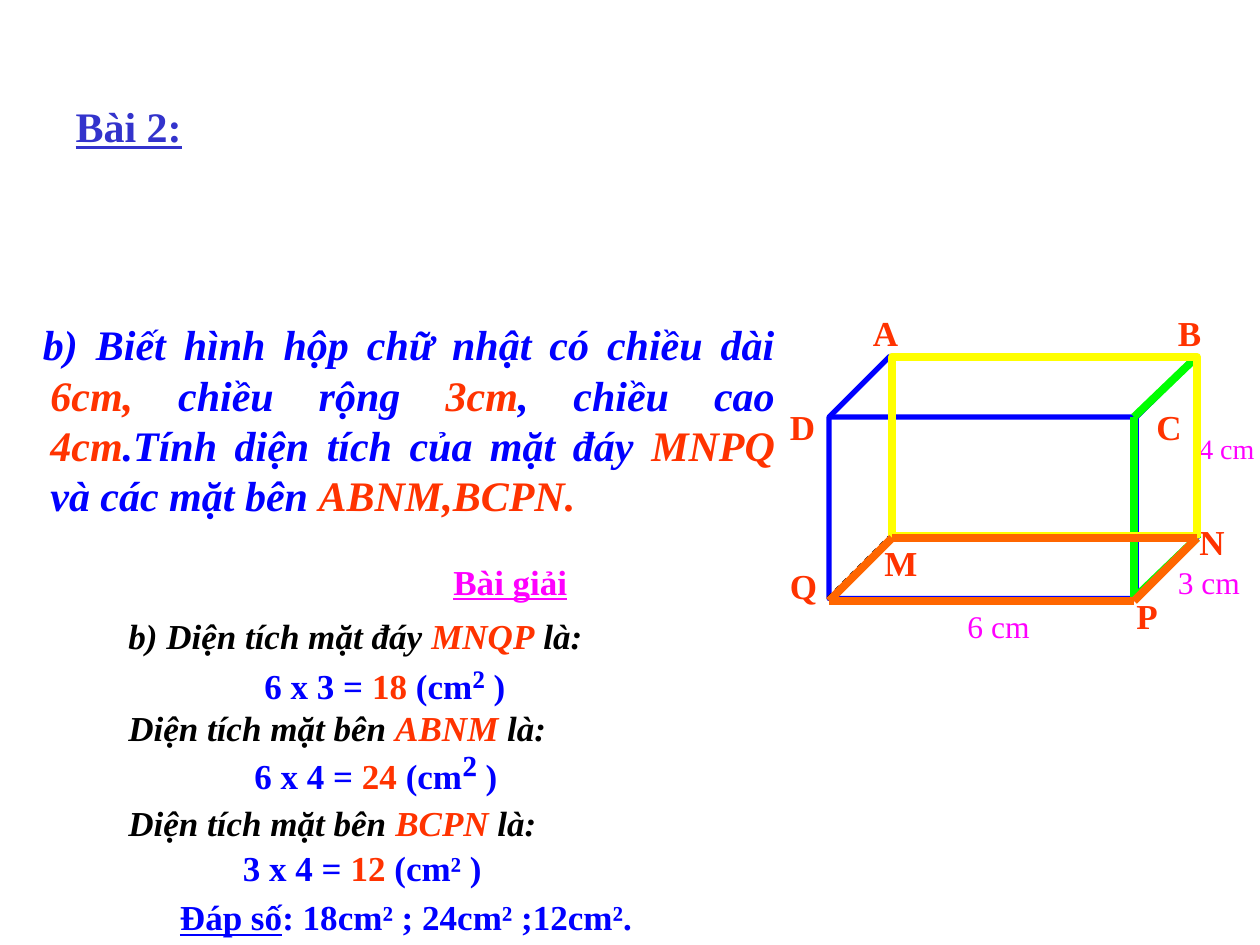
from dataclasses import dataclass

from lxml import etree
from pptx import Presentation
from pptx import util as u
from pptx.dml.color import RGBColor
from pptx.enum import dml, shapes, text
from pptx.oxml import ns


@dataclass(frozen=True)
class Theme:
    font: str = "Times New Roman"
    heading: str = "3333CC"
    blue: str = "0000FF"
    red: str = "FF3300"
    pink: str = "FF00FF"
    black: str = "000000"
    green: str = "00FF00"
    yellow: str = "FFFF00"
    orange: str = "FF6600"
    large: int = 24
    normal: int = 20
    edge: float = 3
    highlight: float = 4.5


THEME = Theme()
EMU_PER_PX = 9144  # 100 px to the inch


def px(value):
    return u.Emu(value * EMU_PER_PX)


def rgb(code):
    return RGBColor.from_string(code)


def write(paragraph, runs, size, bold=True, italic=False):
    """Runs are (text, colour) with an optional dict of run settings."""
    font = paragraph.font
    font.name, font.size, font.bold, font.italic = THEME.font, u.Pt(size), bold, italic
    for content, colour, *settings in runs:
        run = paragraph.add_run()
        run.text = content
        run.font.color.rgb = rgb(colour)
        for name, value in (settings[0] if settings else {}).items():
            setattr(run.font, name, value)


def add_text(parent, left, top, width, height, runs, size=THEME.normal, **style):
    box = parent.add_textbox(px(left), px(top), px(width), px(height))
    box.text_frame.word_wrap = True
    write(box.text_frame.paragraphs[0], runs, size, **style)


def add_line(parent, start, end, colour, width, dash=None):
    line = parent.add_connector(shapes.MSO_CONNECTOR.STRAIGHT, *map(px, start + end))
    line.line.color.rgb = rgb(colour)
    line.line.width = u.Pt(width)
    if dash:
        line.line.dash_style = dash
    etree.SubElement(line._element.spPr, ns.qn("a:effectLst"))


def add_outline(parent, kind, left, top, width, height, colour, weight):
    shape = parent.add_shape(kind, px(left), px(top), px(width), px(height))
    shape.shadow.inherit = False
    shape.fill.background()
    shape.line.color.rgb = rgb(colour)
    shape.line.width = u.Pt(weight)
    return shape


def place(placeholder, left, top, width, height):
    placeholder.left, placeholder.top = px(left), px(top)
    placeholder.width, placeholder.height = px(width), px(height)
    frame = placeholder.text_frame
    frame.auto_size = text.MSO_AUTO_SIZE.NONE
    frame.vertical_anchor = text.MSO_ANCHOR.TOP
    return frame


def build_title(slide, left, top, width, height):
    paragraph = place(slide.shapes.title, left, top, width, height).paragraphs[0]
    paragraph.alignment = text.PP_ALIGN.LEFT
    write(paragraph, [("Bài 2:", THEME.heading, {"underline": True})], THEME.large)


def build_problem(slide, left, top, width, height):
    frame = place(slide.placeholders[1], left, top, width, height)
    frame.margin_top = px(11)
    paragraph = frame.paragraphs[0]
    paragraph.alignment = text.PP_ALIGN.JUSTIFY
    properties = paragraph._p.get_or_add_pPr()
    properties.set("marL", str(px(38)))
    properties.set("indent", str(px(-6)))
    etree.SubElement(properties, ns.qn("a:buNone"))
    blue, red = THEME.blue, THEME.red
    write(paragraph, [
        ("b) Biết hình hộp chữ nhật có chiều dài ", blue), ("6cm,", red),
        (" chiều rộng ", blue), ("3cm", red), (", chiều cao ", blue), ("4cm", red),
        (".Tính diện tích của mặt đáy ", blue), ("MNPQ ", red),
        ("và các mặt bên ", blue), ("ABNM,BCPN.", red),
    ], THEME.large, italic=True)


def build_prism(slide, left, top):
    def at(x, y):
        return left + x, top + y

    # Corners: back face A B N M, front face D C P Q
    a, b, n, m = at(91, 41), at(333, 41), at(333, 185), at(91, 185)
    c, p, q = at(283, 89), at(283, 235), at(41, 235)
    hidden = at(91, 183)

    # Box with its hidden edges and corner letters
    solid = slide.shapes.add_group_shape().shapes
    for end in (at(333, 183), a):
        add_line(solid, hidden, end, THEME.black, THEME.edge, dml.MSO_LINE.ROUND_DOT)
    add_outline(solid, shapes.MSO_SHAPE.CUBE, *at(41, 41), 292, 192, THEME.blue, THEME.edge)
    add_line(solid, at(41, 233), hidden, THEME.black, THEME.edge, dml.MSO_LINE.ROUND_DOT)
    letters = {"A": (66, 0), "B": (308, 0), "N": (325, 166), "Q": (0, 201),
               "M": (75, 183), "P": (275, 225), "D": (0, 75), "C": (291, 75)}
    for letter, corner in letters.items():
        add_text(solid, *at(*corner), 58, 44, [(letter, THEME.red)])

    # Dimensions
    for label, x, y, width, size in (("6 cm", 141, 235, 125, 18),
                                     ("3 cm", 308, 200, 75, 18),
                                     ("4 cm", 325, 96, 100, 16)):
        add_text(slide.shapes, *at(x, y), width, 40, [(label, THEME.pink)], size, bold=False)

    # Side face BCPN, back face ABNM, base MNPQ
    side = slide.shapes.add_group_shape().shapes
    for start, end in ((c, at(283, 233)), (n, at(283, 233)), (b, n), (b, c)):
        add_line(side, start, end, THEME.green, THEME.highlight)
    add_outline(slide.shapes, shapes.MSO_SHAPE.RECTANGLE, *a, 242, 142,
                THEME.yellow, THEME.highlight)
    base = slide.shapes.add_group_shape().shapes
    for start, end in ((m, q), (n, p), (n, m), (p, q)):
        add_line(base, start, end, THEME.orange, THEME.highlight)


def build_solution(slide, left, top):
    group = slide.shapes.add_group_shape().shapes
    blue, red, black = THEME.blue, THEME.red, THEME.black
    underline = {"underline": True}
    add_text(group, left + 258, top, 167, 44, [("Bài giải", THEME.pink, underline)])

    # Statement of each face
    for lead, face, y, width in (("b) Diện tích mặt đáy ", "MNQP", 43, 742),
                                 ("Diện tích mặt bên ", "ABNM", 116, 667),
                                 ("Diện tích mặt bên ", "BCPN", 191, 625)):
        add_text(group, left, top + y, width, 44,
                 [(lead, black), (face, red), (" là:", black)], italic=True)

    # Calculation of each area
    for product, area, square_size, x, y, width, height in (
            ("6 x 3 = ", "18", 24, 108, 77, 408, 51),
            ("6 x 4 = ", "24", 28, 100, 143, 442, 57),
            ("3 x 4 = ", "12", 20, 91, 227, 450, 44)):
        add_text(group, left + x, top + y, width, height,
                 [(product, blue), (area, red), (" (cm", blue),
                  ("²", blue, {"size": u.Pt(square_size)}), (" )", blue)])

    # Answer
    add_text(group, left + 41, top + 266, 675, 44,
             [("Đáp số", blue, underline), (": 18cm² ; 24cm² ;12cm².", blue)])


def main():
    presentation = Presentation()
    presentation.slide_width, presentation.slide_height = px(1000), px(750)
    slide = presentation.slides.add_slide(presentation.slide_layouts[1])
    build_title(slide, 50, 75, 375, 51)
    build_problem(slide, -8, 242, 633, 258)
    build_solution(slide, 92, 440)
    build_prism(slide, 617, 242)
    presentation.save("out.pptx")


if __name__ == "__main__":
    main()
